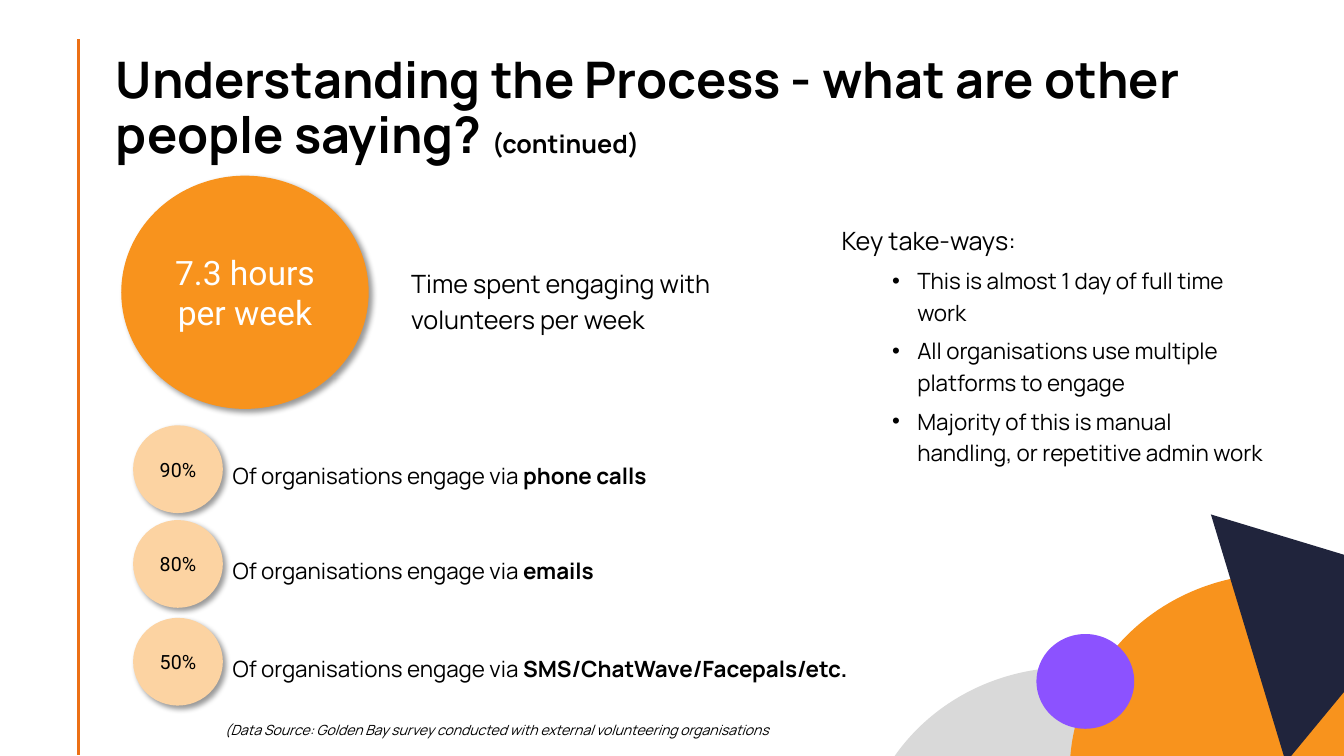
from dataclasses import dataclass

from lxml.etree import SubElement
from pptx import Presentation
from pptx.dml.color import RGBColor
from pptx.enum.shapes import MSO_CONNECTOR as Link, MSO_SHAPE as Kind
from pptx.enum.text import MSO_ANCHOR as Anchor, MSO_AUTO_SIZE as Fit, PP_ALIGN as Align
from pptx.oxml.ns import qn
from pptx.util import Inches, Pt

ORANGE, PEACH, BLACK, WHITE = "F8931D", "FCD3A2", "000000", "FFFFFF"
HEAD, NUM = "Manrope", "Roboto"
Box = tuple[float, float, float, float]


@dataclass
class Run:
    text: str
    size: float
    bold: bool = False
    italic: bool = False
    font: str = HEAD
    color: str = BLACK


@dataclass
class Form:
    kind: Kind
    box: Box
    fill: str
    turn: float = 0


@dataclass
class Stat:
    top: float
    share: str
    means: str
    width: float


FORMS = [
    Form(Kind.OVAL, (8.53, 6.62, 4.15, 3.92), "D9D9D9"),
    Form(Kind.OVAL, (10.61, 5.69, 4.15, 3.92), ORANGE),
    Form(Kind.ISOSCELES_TRIANGLE, (12.02, 5.09, 2.57, 1.93), "20243C", 73.2),
    Form(Kind.OVAL, (10.28, 6.29, 0.97, 0.94), "8C52FF"),
]
STATS = [
    Stat(4.22, "90%", "phone calls", 5.24),
    Stat(5.16, "80%", "emails", 5.24),
    Stat(6.13, "50%", "SMS/ChatWave/Facepals/etc.", 6.94),
]
POINTS = [
    "This is almost 1 day of full time work",
    "All organisations use multiple platforms to engage",
    "Majority of this is manual handling, or repetitive admin work",
]


def paint(color, code: str) -> None:
    color.rgb = RGBColor.from_string(code)


def place(box: Box) -> list[int]:
    return [Inches(v) for v in box]


def write(para, runs: list[Run]) -> None:
    for item in runs:
        run = para.add_run()
        run.text = item.text
        font = run.font
        font.name, font.size = item.font, Pt(item.size)
        font.bold, font.italic = item.bold, item.italic
        paint(font.color, item.color)


def space(para, before: float) -> None:
    para.line_spacing = 1.18
    para.space_before = Pt(before)


def draw(slide, form: Form):
    shape = slide.shapes.add_shape(form.kind, *place(form.box))
    shape.shadow.inherit = False
    shape.rotation = form.turn
    shape.fill.solid()
    paint(shape.fill.fore_color, form.fill)
    shape.line.fill.background()
    return shape


def badge(slide, box: Box, fill: str, run: Run):
    """Draw a shadowed circle with centred text."""
    shape = draw(slide, Form(Kind.OVAL, box, fill))
    effects = shape._element.spPr.find(qn("a:effectLst"))
    cast = SubElement(effects, qn("a:outerShdw"), blurRad=str(Pt(4)), dist=str(Pt(3)),
                      dir=str(45 * 60000), algn="ctr", rotWithShape="0")
    tint = SubElement(cast, qn("a:srgbClr"), val=BLACK)
    SubElement(tint, qn("a:alpha"), val="40000")
    frame = shape.text_frame
    frame.word_wrap = True
    frame.vertical_anchor = Anchor.MIDDLE
    para = frame.paragraphs[0]
    para.alignment = Align.CENTER
    write(para, [run])
    return shape


def label(slide, box: Box, runs: list[Run]):
    frame = slide.shapes.add_textbox(*place(box)).text_frame
    frame.word_wrap = True
    space(frame.paragraphs[0], 10)
    write(frame.paragraphs[0], runs)
    return frame


def bullet(frame, text: str) -> None:
    para = frame.add_paragraph()
    para.level = 1
    space(para, 5)
    props = para._p.get_or_add_pPr()
    props.set("marL", str(Inches(0.75)))
    props.set("indent", str(Inches(-0.25)))
    SubElement(props, qn("a:buFont"), typeface="Arial")
    SubElement(props, qn("a:buChar"), char="•")
    write(para, [Run(text, 16)])


def rule(slide) -> None:
    line = slide.shapes.add_connector(Link.STRAIGHT, *place((0.78, 0.39, 0.78, 7.49)))
    paint(line.line.color, "EC7016")
    line.line.width = Pt(2)
    SubElement(line._element.spPr, qn("a:effectLst"))


def head(slide) -> None:
    title = slide.shapes.title
    title.left, title.top, title.width, title.height = place((1.05, 0.76, 11.64, 0.92))
    frame = title.text_frame
    frame.word_wrap, frame.auto_size = True, Fit.NONE
    frame.vertical_anchor = Anchor.BOTTOM
    para = frame.paragraphs[0]
    para.alignment, para.line_spacing = Align.LEFT, 0.9
    write(para, [
        Run("Understanding the Process - what are other people saying? ", 36, bold=True),
        Run("(continued)", 18, bold=True),
    ])


def main() -> None:
    deck = Presentation()
    deck.slide_width, deck.slide_height = Inches(13.33), Inches(7.5)
    slide = deck.slides.add_slide(deck.slide_layouts[5])
    head(slide)
    rule(slide)
    for form in FORMS:
        draw(slide, form)

    notes = label(slide, (8.25, 2.13, 4.43, 3.01), [Run("Key take-ways:", 18)])
    for point in POINTS:
        bullet(notes, point)

    hours = badge(slide, (1.21, 1.75, 2.44, 2.3), ORANGE,
                  Run("7.3 hours per week", 24, font=NUM, color=WHITE))
    paint(hours.line.color, ORANGE)
    hours.line.width = Pt(1)
    label(slide, (3.98, 2.56, 3.41, 1),
          [Run("Time spent engaging with volunteers per week", 18)])

    for stat in STATS:
        badge(slide, (1.32, stat.top, 0.89, 0.87), PEACH, Run(stat.share, 14, font=NUM))
        label(slide, (2.21, stat.top + 0.27, stat.width, 0.44),
              [Run("Of organisations engage via ", 16), Run(stat.means, 16, bold=True)])

    label(slide, (2.13, 7.08, 7.27, 0.37), [
        Run("(Data Source: Golden Bay survey conducted with external volunteering organisations",
            10, italic=True)])
    deck.save("out.pptx")


if __name__ == "__main__":
    main()
